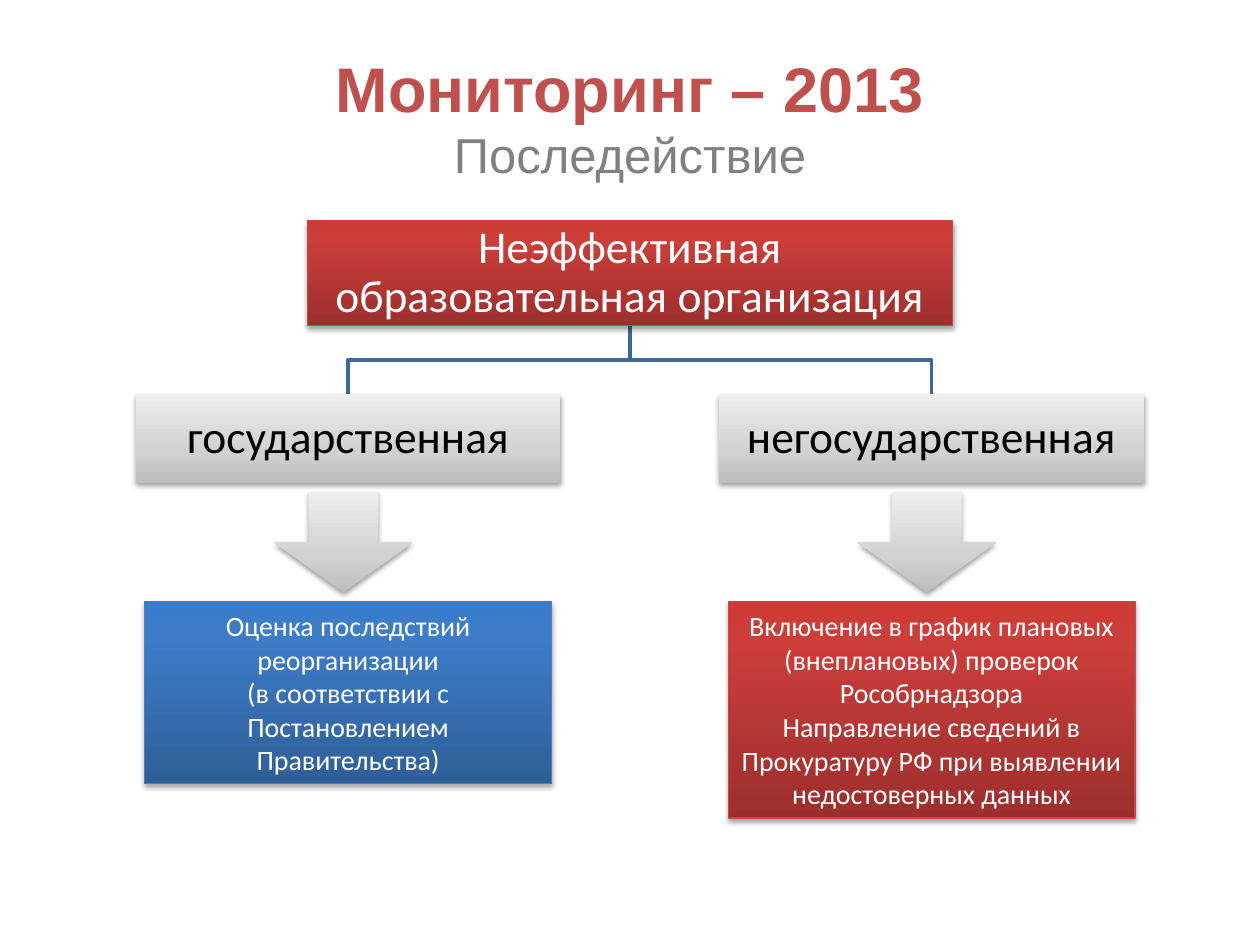
import pptx
import pptx.util
import pptx.dml.color
import pptx.enum.shapes
import pptx.enum.text
import pptx.oxml
import pptx.oxml.ns
from pptx.util import Cm

SHAPE = pptx.enum.shapes.MSO_SHAPE
RED = {"stops": [(0, "9C2F2D"), (80, "CB3E3A"), (100, "CE3B37")], "line": "BF4C48", "text": "FFFFFF"}
BLUE = {"stops": [(0, "2F5F99"), (80, "3D7CC7"), (100, "3A7CCB")], "line": "4B7EBC", "text": "FFFFFF"}
GREY = {"stops": [(0, "BDBDBD"), (35, "D1D1D1"), (100, "EEEEEE")], "line": None, "text": "000000"}


def color(value):
    return pptx.dml.color.RGBColor.from_string(value)


def format_run(run, font, size, value, bold=False):
    run.font.name = font
    run.font.size = pptx.util.Pt(size)
    run.font.color.rgb = color(value)
    run.font.bold = bold


def add_xml(parent, xml):
    declaration = pptx.oxml.ns.nsdecls("a")
    parent.append(pptx.oxml.parse_xml(xml.replace(" ", f" {declaration} ", 1)))


def add_block(slide, kind, left, top, width, height, theme):
    block = slide.shapes.add_shape(kind, Cm(left), Cm(top), Cm(width), Cm(height))
    block.fill.gradient()
    properties = block.element.spPr
    stops = properties.find(".//" + pptx.oxml.ns.qn("a:gsLst"))
    for stop in list(stops):
        stops.remove(stop)
    for position, value in theme["stops"]:
        add_xml(stops, f'<a:gs pos="{position * 1000}"><a:srgbClr val="{value}"/></a:gs>')
    block.fill.gradient_angle = 90
    if theme["line"]:
        block.line.color.rgb = color(theme["line"])
        block.line.width = pptx.util.Pt(0.75)
    else:
        block.line.fill.background()
    block.shadow.inherit = False
    distance, alpha = (1.8, 35) if theme["line"] else (1.6, 38)
    add_xml(
        properties.find(pptx.oxml.ns.qn("a:effectLst")),
        f'<a:outerShdw blurRad="{pptx.util.Pt(3.1)}" dist="{pptx.util.Pt(distance)}" '
        f'dir="5400000" rotWithShape="0"><a:srgbClr val="000000">'
        f'<a:alpha val="{alpha * 1000}"/></a:srgbClr></a:outerShdw>',
    )
    return block


def write_block(block, lines, size, theme, margin=None, spacing=None):
    frame = block.text_frame
    frame.text = "\n".join(lines)
    frame.word_wrap = True
    frame.vertical_anchor = pptx.enum.text.MSO_ANCHOR.MIDDLE
    if margin is not None:
        frame.margin_left = frame.margin_right = Cm(margin)
        frame.margin_top = frame.margin_bottom = Cm(margin)
    for paragraph in frame.paragraphs:
        paragraph.alignment = pptx.enum.text.PP_ALIGN.CENTER
        paragraph.line_spacing = spacing
        format_run(paragraph.runs[0], "Calibri", size, theme["text"])


def add_heading(slide, left, top, width, height):
    heading = slide.shapes.add_textbox(Cm(left), Cm(top), Cm(width), Cm(height))
    frame = heading.text_frame
    frame.word_wrap = True
    frame.vertical_anchor = pptx.enum.text.MSO_ANCHOR.MIDDLE
    frame.text = "Мониторинг – 2013\vПоследействие"
    paragraph = frame.paragraphs[0]
    paragraph.alignment = pptx.enum.text.PP_ALIGN.CENTER
    title, subtitle = paragraph.runs
    format_run(title, "Arial", 36, "C0504D", True)
    format_run(subtitle, "Arial", 28, "808080")


def add_organization(slide, left, top, width, height, text, theme):
    organization = add_block(slide, SHAPE.RECTANGLE, left, top, width, height, theme)
    write_block(organization, [text], 26, theme, margin=0.05, spacing=0.9)


def add_link(slide, start_x, start_y, end_x, end_y):
    middle_y = (start_y + end_y) / 2
    builder = slide.shapes.build_freeform(Cm(start_x), Cm(start_y))
    corners = [(start_x, middle_y), (end_x, middle_y), (end_x, end_y)]
    builder.add_line_segments([(Cm(x), Cm(y)) for x, y in corners], close=False)
    link = builder.convert_to_shape()
    link.fill.background()
    link.line.color.rgb = color("3F6797")
    link.line.width = pptx.util.Pt(2)
    link.shadow.inherit = False


def add_branch(slide, left, top, width, name, consequences, consequence_height, theme):
    add_organization(slide, left, top, width, 1.78, name, GREY)
    add_block(slide, SHAPE.DOWN_ARROW, left + 2.79, top + 1.98, 2.79, 2.01, GREY)
    consequence = add_block(
        slide, SHAPE.RECTANGLE, left + 0.18, top + 4.17, 8.2, consequence_height, theme
    )
    write_block(consequence, consequences, 16, theme)


def main():
    presentation = pptx.Presentation()
    presentation.slide_width = Cm(25.4)
    presentation.slide_height = Cm(19.05)
    slide = presentation.slides.add_slide(presentation.slide_layouts[6])

    root_left, root_top, root_width, root_height = 6.2, 4.45, 13, 2.11
    branch_top, branch_width = 7.95, 8.56
    branches = [
        (2.74, "государственная", [
            "Оценка последствий реорганизации",
            "(в соответствии с Постановлением Правительства)",
        ], 3.68, BLUE),
        (14.5, "негосударственная", [
            "Включение в график плановых (внеплановых) проверок Рособрнадзора",
            "Направление сведений в Прокуратуру РФ при выявлении недостоверных данных",
        ], 4.37, RED),
    ]

    add_heading(slide, 1.27, 0.76, 22.86, 3.18)
    for left, *_ in branches:
        add_link(slide, root_left + root_width / 2, root_top + root_height,
                 left + branch_width / 2, branch_top)
    add_organization(slide, root_left, root_top, root_width, root_height,
                     "Неэффективная образовательная организация", RED)
    for left, name, consequences, height, theme in branches:
        add_branch(slide, left, branch_top, branch_width, name, consequences, height, theme)

    presentation.save("out.pptx")


if __name__ == "__main__":
    main()
